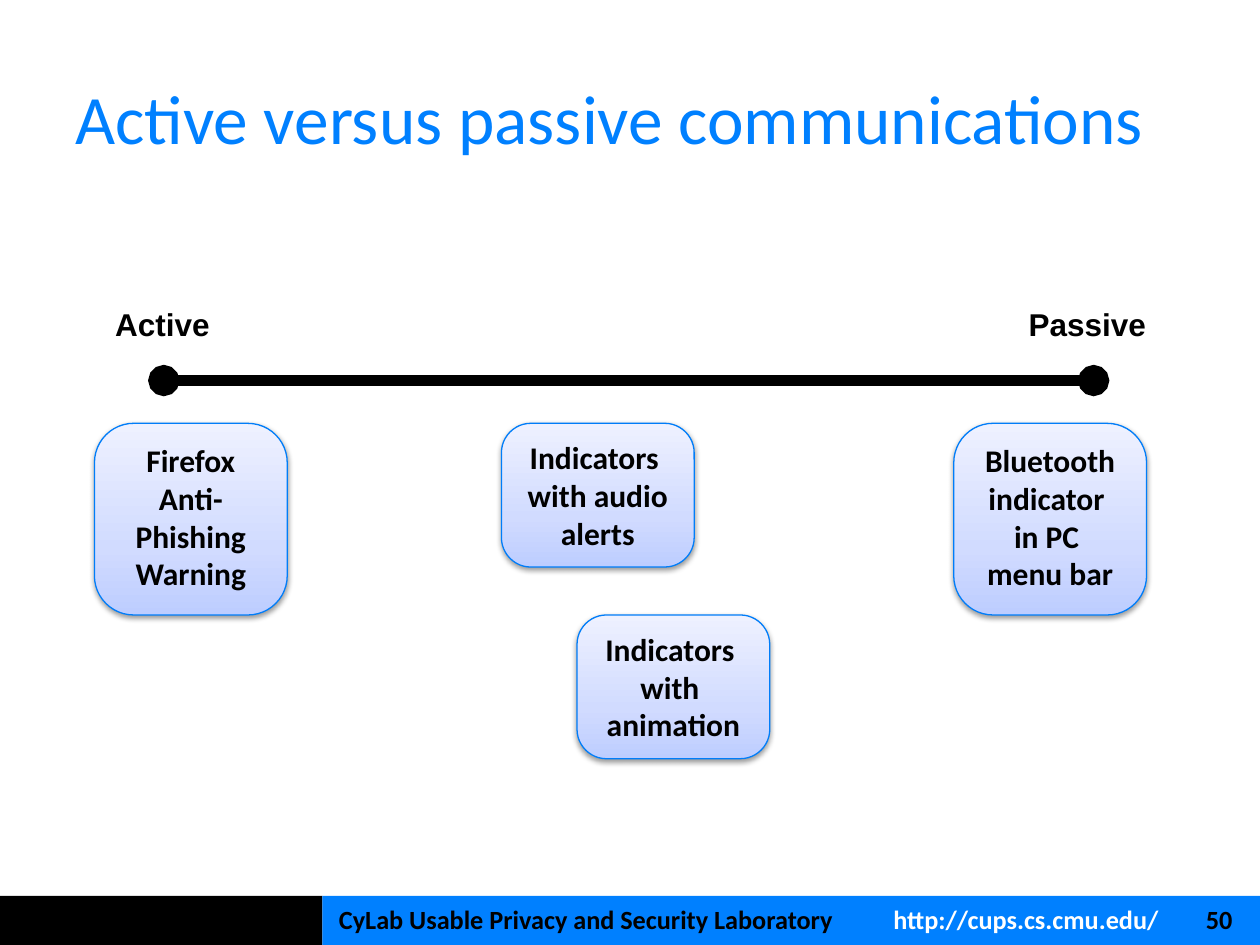
from dataclasses import dataclass

from lxml.etree import SubElement
from pptx import Presentation
from pptx.dml.color import RGBColor as RGB
from pptx.enum.shapes import MSO_CONNECTOR as CONN, MSO_SHAPE as SHAPE
from pptx.enum.text import MSO_ANCHOR as ANCHOR, PP_ALIGN as ALIGN
from pptx.oxml import parse_xml
from pptx.oxml.ns import nsdecls, qn
from pptx.util import Inches, Pt


@dataclass(frozen=True)
class Theme:
    black: str = "000000"
    white: str = "FFFFFF"
    blue: str = "0080FF"
    outline: str = "007DF9"
    gradient: tuple = ((0, "BDCDFF"), (35, "D1DBFF"), (100, "EEF1FF"))
    body: str = "Calibri"
    label: str = "Arial"
    title_size: float = 39.6
    text_size: float = 18
    footer_size: float = 15


T = Theme()
W, H = Inches(10), Inches(7.5)

# Grid in percent of the slide: one row holds one line of card text
ROW = 5.07
CARD_W = 15.3
CARD_TOP = 44.8
AXIS_Y = 40.27


def area(x, y, w, h):
    """Turn percentages of the slide into left, top, width, height."""
    return int(W * x / 100), int(H * y / 100), int(W * w / 100), int(H * h / 100)


def style(font, name, size, color, bold=False):
    font.name, font.size, font.bold = name, Pt(size), bold
    font.color.rgb = RGB.from_string(color)


def add_bar(s, x, w, color):
    sp = s.shapes.add_shape(SHAPE.RECTANGLE, *area(x, 94.8, w, 5.2))
    sp.shadow.inherit = False
    sp.fill.solid()
    sp.fill.fore_color.rgb = RGB.from_string(color)
    sp.line.fill.background()


def add_footer(s, parts, tabs):
    tf = s.shapes.add_textbox(*area(22, 94.93, 76.8, 3.47)).text_frame
    tf.word_wrap = True
    tf.margin_left = Inches(0.49)
    p = tf.paragraphs[0]
    stops = SubElement(p._p.get_or_add_pPr(), qn("a:tabLst"))
    for pos in tabs:
        SubElement(stops, qn("a:tab"), pos=str(Inches(pos)), algn="l")
    for i, (text, color) in enumerate(parts):
        r = p.add_run()
        r.text = "\t" + text if i else text
        style(r.font, T.body, T.footer_size, color, True)


def add_title(s, text):
    tf = s.shapes.add_textbox(*area(5, 4, 90, 16.67)).text_frame
    tf.word_wrap = True
    tf.vertical_anchor = ANCHOR.MIDDLE
    p = tf.paragraphs[0]
    p.text = text
    style(p.font, T.body, T.title_size, T.blue)


def add_axis(s, x1, x2):
    y = int(H * AXIS_Y / 100)
    c = s.shapes.add_connector(CONN.STRAIGHT, int(W * x1 / 100), y, int(W * x2 / 100), y)
    c.line.width = Pt(6)
    c.line.color.rgb = RGB.from_string(T.black)
    ln = c.line._get_or_add_ln()
    for end in ("a:headEnd", "a:tailEnd"):
        SubElement(ln, qn(end), type="oval")
    SubElement(c._element.spPr, qn("a:effectLst"))


def add_rounded(s, box, adj, text, font):
    sp = s.shapes.add_shape(SHAPE.ROUNDED_RECTANGLE, *box)
    sp.adjustments[0] = adj
    sp.shadow.inherit = False
    sp.fill.background()
    sp.line.fill.background()
    tf = sp.text_frame
    tf.word_wrap = False
    tf.vertical_anchor = ANCHOR.TOP
    p = tf.paragraphs[0]
    p.text = text
    p.alignment = ALIGN.CENTER
    style(p.font, font, T.text_size, T.black, True)
    return sp


def add_label(s, x, text):
    add_rounded(s, area(x, 30.8, 15, 5.6), 0.479, text, T.label)


def add_card(s, x, row, text):
    rows = text.count("\n") + 1
    box = area(x, CARD_TOP + row * ROW, CARD_W, rows * ROW)
    sp = add_rounded(s, box, 0.205, text, T.body)
    sp.line.color.rgb = RGB.from_string(T.outline)
    sp.line.width = Pt(0.75)
    # Three-stop gradient, dark at the bottom
    stops = "".join(f'<a:gs pos="{pos * 1000}"><a:srgbClr val="{color}"/></a:gs>'
                    for pos, color in T.gradient)
    spPr = sp._element.spPr
    spPr.replace(spPr.find(qn("a:noFill")), parse_xml(
        f'<a:gradFill {nsdecls("a")} rotWithShape="1"><a:gsLst>{stops}</a:gsLst>'
        '<a:lin ang="16200000" scaled="0"/></a:gradFill>'))
    # Soft shadow straight below
    shadow = SubElement(spPr.find(qn("a:effectLst")), qn("a:outerShdw"),
                        blurRad=str(Pt(3.1)), dist=str(Pt(1.6)),
                        dir="5400000", rotWithShape="0")
    color = SubElement(shadow, qn("a:srgbClr"), val=T.black)
    SubElement(color, qn("a:alpha"), val="38000")


def main():
    prs = Presentation()
    prs.slide_width, prs.slide_height = W, H
    s = prs.slides.add_slide(prs.slide_layouts[6])

    # Footer band
    add_bar(s, 0, 25.6, T.black)
    add_bar(s, 25.6, 74.4, T.blue)
    add_footer(s, [("CyLab Usable Privacy and Security Laboratory", T.black),
                   ("http://cups.cs.cmu.edu/", T.white),
                   ("50", T.black)], tabs=(4.4, 6.88))

    add_title(s, "Active versus passive communications")

    # Scale from active to passive
    add_axis(s, 13, 86.8)
    add_label(s, 5.4, "Active")
    add_label(s, 78.8, "Passive")

    # Examples along the scale
    for x, row, text in (
        (7.5, 0, "Firefox\nAnti-\nPhishing\nWarning"),
        (75.7, 0, "Bluetooth\nindicator \nin PC \nmenu bar"),
        (39.8, 0, "Indicators \nwith audio\nalerts"),
        (45.8, 4, "Indicators \nwith \nanimation"),
    ):
        add_card(s, x, row, text)

    prs.save("out.pptx")


if __name__ == "__main__":
    main()
